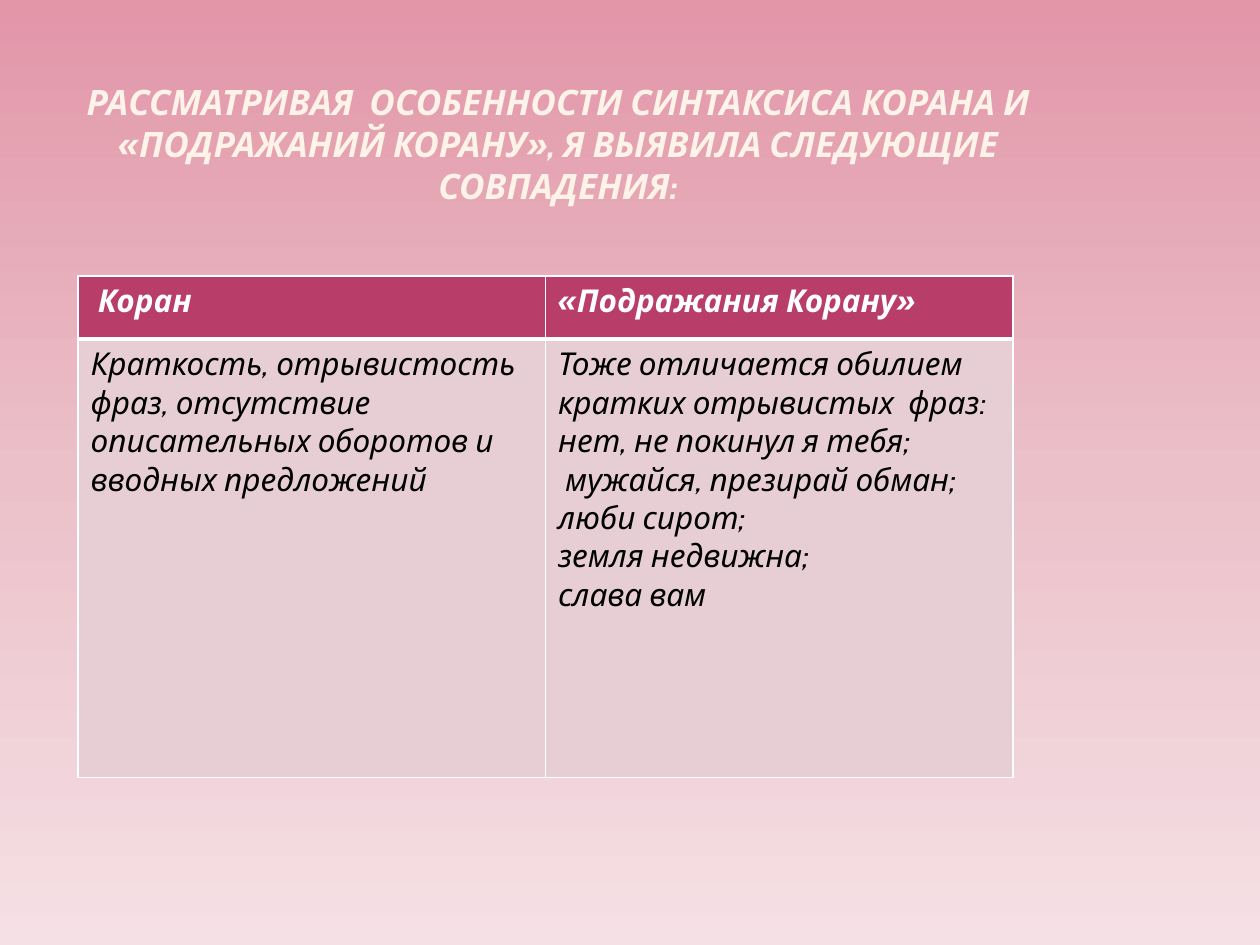
from copy import deepcopy
from dataclasses import dataclass

from pptx import Presentation
from pptx.dml.color import RGBColor
from pptx.enum.text import MSO_ANCHOR, MSO_AUTO_SIZE, PP_ALIGN
from pptx.oxml.ns import qn
from pptx.oxml.xmlchemy import OxmlElement
from pptx.util import Inches, Pt

BOTTOM = MSO_ANCHOR.BOTTOM
CENTER = PP_ALIGN.CENTER
NO_AUTOFIT = MSO_AUTO_SIZE.NONE
TITLE_ONLY = 5


@dataclass(frozen=True)
class Theme:
    font: str = "Cabin"
    title_size: int = 20
    table_size: int = 18
    title: str = "FEF3E8"
    header_fill: str = "B83D68"
    header_text: str = "FFFFFF"
    body_fill: str = "E6CED4"
    body_text: str = "000000"
    border: str = "FFFFFF"
    thin: int = 1
    thick: int = 3
    background: tuple = ("E296A8", "EBC0C9", "F5E0E5")


THEME = Theme()
TITLE = ("РАССМАТРИВАЯ  ОСОБЕННОСТИ СИНТАКСИСА КОРАНА И «ПОДРАЖАНИЙ КОРАНУ», "
         "Я ВЫЯВИЛА СЛЕДУЮЩИЕ СОВПАДЕНИЯ:")
ROWS = [
    [" Коран", "«Подражания Корану»"],
    [
        "Краткость, отрывистость фраз, отсутствие описательных оборотов "
        "и вводных предложений",
        "Тоже отличается обилием кратких отрывистых  фраз:\n"
        "нет, не покинул я тебя;\n"
        " мужайся, презирай обман;\n"
        "люби сирот;\n"
        "земля недвижна;\n"
        "слава вам",
    ],
]


def style_paragraphs(frame, size, color, bold):
    for para in frame.paragraphs:
        font = para.font
        font.name = THEME.font
        font.size = Pt(size)
        font.bold = bold
        font.italic = True
        font.color.rgb = RGBColor.from_string(color)


def paint_background(page):
    fill = page.background.fill
    fill.gradient()
    fill.gradient_angle = 270
    stop_list = page._element.find(".//" + qn("a:gsLst"))
    stop_list.insert(1, deepcopy(stop_list[0]))
    last = len(THEME.background) - 1
    for index, (stop, color) in enumerate(zip(fill.gradient_stops, THEME.background)):
        stop.position = index / last
        stop.color.rgb = RGBColor.from_string(color)


def place_title(page, left, top, width, height):
    title = page.shapes.title
    title.left, title.top, title.width, title.height = left, top, width, height
    frame = title.text_frame
    frame.text = TITLE
    frame.word_wrap = True
    frame.auto_size = NO_AUTOFIT
    frame.vertical_anchor = BOTTOM
    frame.margin_left = frame.margin_right = Inches(0.05)
    frame.margin_top = frame.margin_bottom = 0
    frame.paragraphs[0].alignment = CENTER
    style_paragraphs(frame, THEME.title_size, THEME.title, True)


def add_borders(cell, widths):
    properties = cell._tc.get_or_add_tcPr()
    for index, (side, width) in enumerate(widths.items()):
        line = OxmlElement(f"a:ln{side}")
        line.set("w", str(Pt(width)))
        fill = OxmlElement("a:solidFill")
        color = OxmlElement("a:srgbClr")
        color.set("val", THEME.border)
        fill.append(color)
        line.append(fill)
        properties.insert(index, line)


def place_table(page, left, top, width, height):
    table = page.shapes.add_table(
        len(ROWS), len(ROWS[0]), left, top, width, height).table
    header_height = Inches(0.5)
    table.rows[0].height = header_height
    table.rows[1].height = height - header_height
    for row_index, texts in enumerate(ROWS):
        header = row_index == 0
        fill = THEME.header_fill if header else THEME.body_fill
        color = THEME.header_text if header else THEME.body_text
        borders = dict.fromkeys("LRTB", THEME.thin)
        borders["B" if header else "T"] = THEME.thick
        for column_index, text in enumerate(texts):
            cell = table.cell(row_index, column_index)
            cell.text = text
            cell.fill.solid()
            cell.fill.fore_color.rgb = RGBColor.from_string(fill)
            add_borders(cell, borders)
            style_paragraphs(cell.text_frame, THEME.table_size, color, header)


def main():
    deck = Presentation()
    deck.slide_width, deck.slide_height = Inches(10), Inches(7.5)
    page = deck.slides.add_slide(deck.slide_layouts[TITLE_ONLY])
    paint_background(page)
    place_title(page, Inches(0.47), Inches(0.39), Inches(7.92), Inches(1.25))
    place_table(page, Inches(0.62), Inches(2.19), Inches(7.42), Inches(3.98))
    deck.save("out.pptx")


if __name__ == "__main__":
    main()
